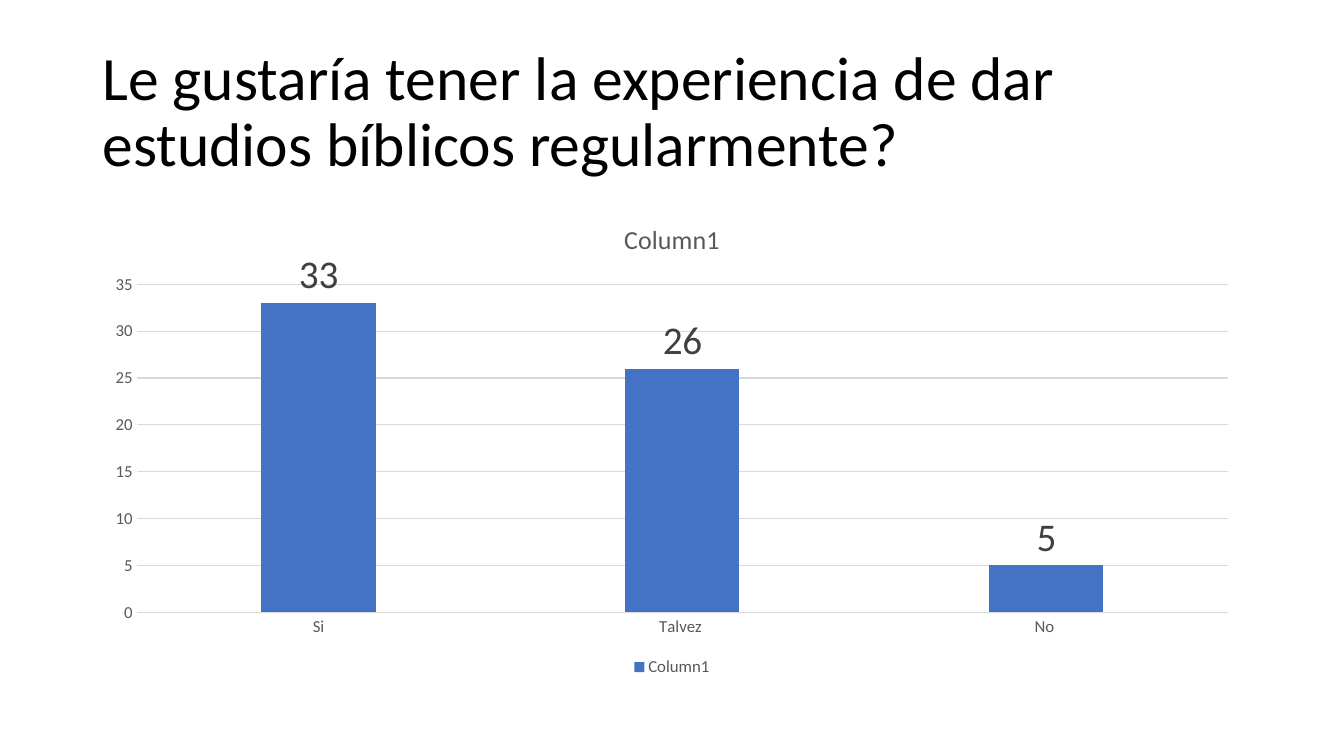
from pptx import Presentation
from pptx.chart.data import CategoryChartData
from pptx.dml.color import RGBColor
from pptx.enum.chart import XL_CHART_TYPE, XL_LABEL_POSITION, XL_LEGEND_POSITION, XL_TICK_MARK
from pptx.enum.text import MSO_ANCHOR, PP_ALIGN
from pptx.util import Pt

BLACK = RGBColor(0x00, 0x00, 0x00)
DARK_GRAY = RGBColor(0x40, 0x40, 0x40)
GRAY = RGBColor(0x59, 0x59, 0x59)
LIGHT_GRAY = RGBColor(0xD9, 0xD9, 0xD9)
BLUE = RGBColor(0x44, 0x72, 0xC4)


def set_font(font, size, color):
    font.name = "Calibri"
    font.size = Pt(size)
    font.bold = False
    font.color.rgb = color


def set_line(line, color):
    line.color.rgb = color
    line.width = Pt(0.75)


def set_title(page, text):
    title = page.shapes.title
    title.left, title.top, title.width, title.height = Pt(66), Pt(28.8), Pt(828), Pt(104.4)
    frame = title.text_frame
    frame.text = text
    frame.word_wrap = True
    frame.vertical_anchor = MSO_ANCHOR.MIDDLE
    para = frame.paragraphs[0]
    para.alignment = PP_ALIGN.LEFT
    para.line_spacing = 0.9
    set_font(para.font, 44, BLACK)


def style_axis(axis):
    axis.major_tick_mark = axis.minor_tick_mark = XL_TICK_MARK.NONE
    set_font(axis.tick_labels.font, 12, GRAY)


def add_answer_chart(page, series_name, answers):
    data = CategoryChartData()
    data.categories = list(answers)
    data.add_series(series_name, list(answers.values()))
    chart = page.shapes.add_chart(
        XL_CHART_TYPE.COLUMN_CLUSTERED, Pt(66), Pt(144), Pt(828), Pt(342.6), data
    ).chart
    set_font(chart.font, 10, BLACK)

    chart.has_title = True
    chart.chart_title.include_in_layout = False
    heading = chart.chart_title.text_frame
    heading.text = series_name
    set_font(heading.paragraphs[0].font, 18.6, GRAY)

    chart.has_legend = True
    chart.legend.position = XL_LEGEND_POSITION.BOTTOM
    chart.legend.include_in_layout = False
    set_font(chart.legend.font, 12, GRAY)

    style_axis(chart.category_axis)
    set_line(chart.category_axis.format.line, LIGHT_GRAY)
    style_axis(chart.value_axis)
    chart.value_axis.format.line.fill.background()
    set_line(chart.value_axis.major_gridlines.format.line, LIGHT_GRAY)

    plot = chart.plots[0]
    plot.vary_by_categories = False
    plot.gap_width = 219
    plot.overlap = -27
    columns = plot.series[0]
    columns.format.fill.solid()
    columns.format.fill.fore_color.rgb = BLUE
    labels = columns.data_labels
    labels.show_value = True
    labels.position = XL_LABEL_POSITION.OUTSIDE_END
    set_font(labels.font, 28, DARK_GRAY)


def main():
    deck = Presentation()
    deck.slide_width, deck.slide_height = Pt(960), Pt(540)
    page = deck.slides.add_slide(deck.slide_layouts[5])
    set_title(page, "Le gustaría tener la experiencia de dar estudios bíblicos regularmente?")
    add_answer_chart(page, "Column1", {"Si": 33, "Talvez ": 26, "No ": 5})
    deck.save("out.pptx")


if __name__ == "__main__":
    main()
